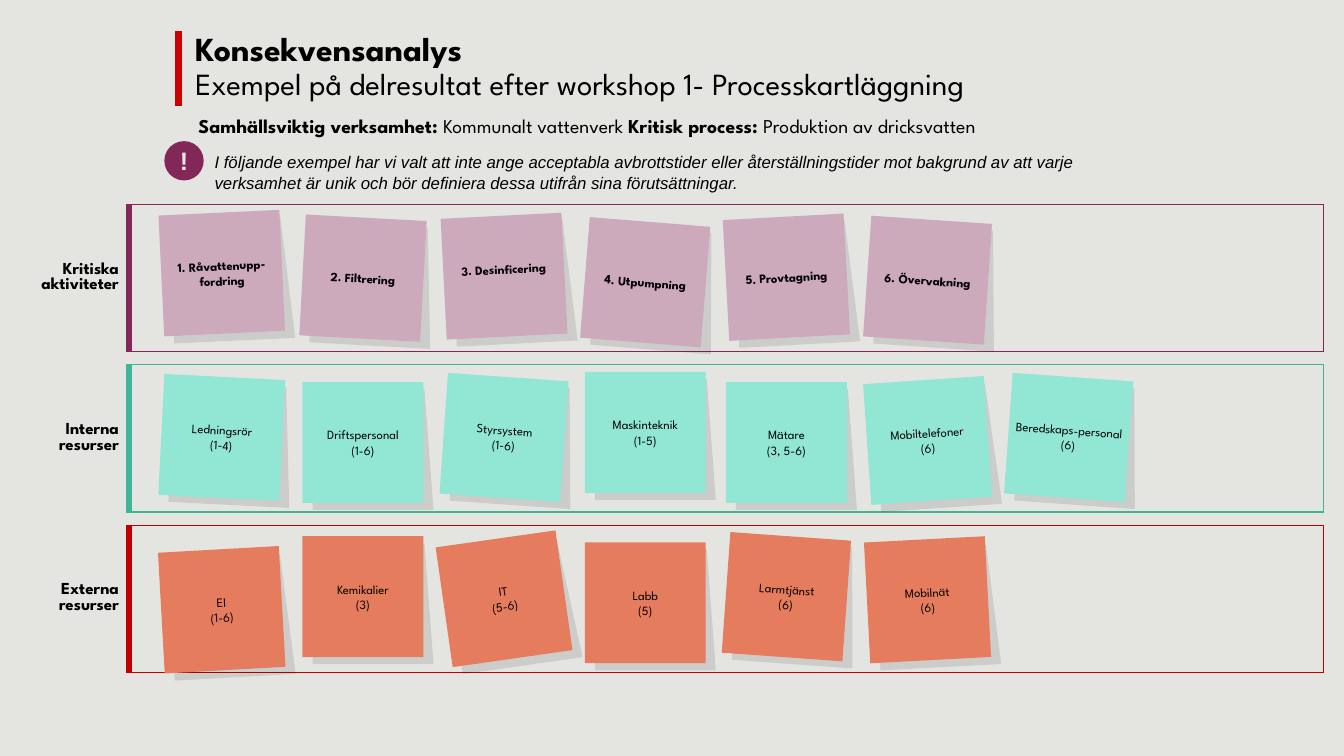
"""Build a slide of sticky notes for a consequence analysis workshop."""
from lxml.etree import SubElement
from pptx import Presentation
from pptx.dml.color import RGBColor
from pptx.enum.shapes import MSO_CONNECTOR, MSO_SHAPE
from pptx.enum.text import MSO_ANCHOR, MSO_AUTO_SIZE, PP_ALIGN
from pptx.oxml.ns import qn
from pptx.util import Inches, Pt

BACKGROUND = RGBColor(0xE4, 0xE4, 0xE1)
BLACK = RGBColor(0, 0, 0)
PLUM = RGBColor(0x82, 0x27, 0x57)
GREEN = RGBColor(0x41, 0xB4, 0x96)
DARK_RED = RGBColor(0xC0, 0, 0)
RED = RGBColor(0xCC, 0, 0)
PINK = RGBColor(0xCD, 0xA9, 0xBC)
MINT = RGBColor(0x92, 0xE6, 0xD4)
CORAL = RGBColor(0xE6, 0x7C, 0x5E)
LIGHT_GREY = RGBColor(0xE7, 0xE6, 0xE6)
HEADING_FONT = "League Spartan"
NO_GRID_STYLE = "{2D5ABB26-0587-4C30-8999-92F81FD0307C}"
LANE_HEIGHT, GAP_HEIGHT = 1.46, 0.13
LABEL_WIDTH, LANE_WIDTH = 1.11, 11.85
NOTE_SIZE, NOTE_PITCH = 1.2, 1.4

# Each lane: label, line colour, note colour, bold, notes as (text, top, rotation).
LANES = [
    ("Kritiska\naktiviteter", PLUM, PINK, True, [
        ("1. Råvattenupp-fordring", 2.11, 357.3),
        ("2. Filtrering", 2.16, 3.1),
        ("3. Desinficering", 2.14, 357.1),
        ("4. Utpumpning", 2.2, 4.6),
        ("5. Provtagning", 2.15, 356.9),
        ("6. Övervakning", 2.18, 3.9)]),
    ("Interna\nresurser", GREEN, MINT, False, [
        ("Ledningsrör\v(1-4)", 3.74, 2.9),
        ("Driftspersonal\v(1-6)", 3.79, 0),
        ("Styrsystem\v(1-6)", 3.74, 4),
        ("Maskinteknik\v(1-5)", 3.69, 0),
        ("Mätare\v(3, 5-6)", 3.79, 0),
        ("Mobiltelefoner\v(6)", 3.77, 356.1),
        ("Beredskaps-personal\v(6)", 3.74, 4.1)]),
    ("Externa resurser", DARK_RED, CORAL, False, [
        ("El\v(1-6)", 5.45, 356.8),
        ("Kemikalier\v(3)", 5.32, 0),
        ("IT\v(5-6)", 5.34, 351.9),
        ("Labb\v(5)", 5.38, 0),
        ("Larmtjänst\v(6)", 5.32, 4.1),
        ("Mobilnät\v(6)", 5.35, 357)]),
]
RAISED_NOTES = {"3. Desinficering": 0.14}


def set_font(font, size, color=BLACK, name=HEADING_FONT, bold=False, italic=False):
    """Set every property of a font."""
    font.size, font.name, font.bold, font.italic = Pt(size), name, bold, italic
    font.color.rgb = color


def set_borders(cell, **borders):
    """Draw the given sides (L, R, T, B) of a cell as (colour, width) and hide the rest."""
    properties = cell._tc.get_or_add_tcPr()
    for side in "LRTB":
        color, width = borders.get(side, (None, 0))
        line = SubElement(properties, qn(f"a:ln{side}"), w=str(Pt(width)))
        if color is None:
            SubElement(line, qn("a:noFill"))
        else:
            fill = SubElement(line, qn("a:solidFill"))
            SubElement(fill, qn("a:srgbClr"), val=str(color))
    cell.fill.background()


def add_lanes(page, left, top):
    """Add the table of labelled lanes separated by narrow gaps."""
    rows = 2 * len(LANES) - 1
    height = len(LANES) * LANE_HEIGHT + (len(LANES) - 1) * GAP_HEIGHT
    table = page.shapes.add_table(rows, 2, Inches(left), Inches(top),
                                  Inches(LABEL_WIDTH + LANE_WIDTH), Inches(height)).table
    table.first_row = table.horz_banding = False
    table._tbl.tblPr.find(qn("a:tableStyleId")).text = NO_GRID_STYLE
    table.columns[0].width = Inches(LABEL_WIDTH)
    table.columns[1].width = Inches(LANE_WIDTH)
    for index in range(rows):
        label, lane = table.cell(index, 0), table.cell(index, 1)
        text, color = LANES[index // 2][:2]
        if index % 2:
            table.rows[index].height = Inches(GAP_HEIGHT)
            set_borders(label)
            set_borders(lane, T=(color, 1), B=(LANES[index // 2 + 1][1], 1))
            for cell in (label, lane):
                cell.margin_top = cell.margin_bottom = 0
                cell.text_frame.paragraphs[0].font.size = Pt(1)
            continue
        table.rows[index].height = Inches(LANE_HEIGHT)
        thin, thick = (color, 1), (color, 4.5)
        set_borders(label, R=thick)
        set_borders(lane, L=thick, T=thin, R=thin, B=thin)
        label.vertical_anchor = MSO_ANCHOR.MIDDLE
        label.text_frame.text = text
        for para in label.text_frame.paragraphs:
            para.alignment = PP_ALIGN.RIGHT
            set_font(para.font, 12, bold=True)


def style_shape(shape, color):
    """Give a shape a flat fill without line or shadow."""
    shape.shadow.inherit = False
    shape.fill.solid()
    shape.fill.fore_color.rgb = color
    shape.line.fill.background()


def fill_centred(shape, text):
    """Centre text in a shape without insets and return its paragraph."""
    frame = shape.text_frame
    frame.word_wrap = True
    frame.vertical_anchor = MSO_ANCHOR.MIDDLE
    frame.margin_left = frame.margin_right = frame.margin_top = frame.margin_bottom = 0
    para = frame.paragraphs[0]
    para.text = text
    para.alignment = PP_ALIGN.CENTER
    return para


def add_note(page, left, top, text, rotation, color, bold):
    """Add a tilted sticky note over its slanted shadow."""
    group = page.shapes.add_group_shape()
    builder = group.shapes.build_freeform(0, 0, scale=Inches(1) / 100)
    side = NOTE_SIZE * 100
    builder.add_line_segments([(side - 9, 0), (side, side), (0, side)], close=True)
    shadow = builder.convert_to_shape(Inches(left + 0.1), Inches(top + 0.07))
    style_shape(shadow, BLACK)
    SubElement(shadow._element.spPr.find(qn("a:solidFill"))[0], qn("a:alpha"), val="10000")
    note = group.shapes.add_shape(MSO_SHAPE.RECTANGLE, Inches(left), Inches(top),
                                  Inches(NOTE_SIZE), Inches(NOTE_SIZE))
    style_shape(note, color)
    shadow.rotation = note.rotation = rotation
    set_font(fill_centred(note, text).font, 9, bold=bold)
    note.text_frame.margin_bottom = Inches(RAISED_NOTES.get(text, 0))


def add_notes(page, left):
    """Add the sticky notes of every lane at an even pitch."""
    for _, _, color, bold, notes in LANES:
        for index, (text, top, rotation) in enumerate(notes):
            add_note(page, left + index * NOTE_PITCH, top, text, rotation, color, bold)


def add_text_frame(page, left, top, width, height):
    """Add a wrapping text box and return its frame."""
    box = page.shapes.add_textbox(Inches(left), Inches(top), Inches(width), Inches(height))
    box.text_frame.word_wrap = True
    return box.text_frame


def add_title(page, left, top):
    """Add the two-line title and the red bar beside it."""
    frame = add_text_frame(page, left, top, 11.2, 0.47)
    frame.text = ("Konsekvensanalys\n"
                  "Exempel på delresultat efter workshop 1- Processkartläggning")
    for para, size, bold in zip(frame.paragraphs, (24, 22), (True, False)):
        para.line_spacing = 0.9
        set_font(para.font, size, bold=bold)
    bar_left = Inches(left - 0.07)
    bar = page.shapes.add_connector(MSO_CONNECTOR.STRAIGHT, bar_left, Inches(top + 0.04),
                                    bar_left, Inches(top + 0.78))
    bar.line.color.rgb = RED
    bar.line.width = Pt(5)
    SubElement(bar._element.spPr, qn("a:effectLst"))


def add_introduction(page, left, top):
    """Add the subject line, the remark and its exclamation badge."""
    subject = add_text_frame(page, left, top, 11.26, 0.34)
    spans = ["Samhällsviktig verksamhet: ", "Kommunalt vattenverk ",
             "Kritisk process: ", "Produktion av dricksvatten"]
    for index, text in enumerate(spans):
        span = subject.paragraphs[0].add_run()
        span.text = text
        set_font(span.font, 14, bold=index % 2 == 0)
    remark = add_text_frame(page, left + 0.16, top + 0.38, 9.1, 0.5)
    remark.text = ("I följande exempel har vi valt att inte ange acceptabla avbrottstider eller "
                   "återställningstider mot bakgrund av att varje verksamhet är unik och bör "
                   "definiera dessa utifrån sina förutsättningar.")
    set_font(remark.paragraphs[0].font, 12, name="Arial", italic=True)
    for frame in (subject, remark):
        frame.auto_size = MSO_AUTO_SIZE.SHAPE_TO_FIT_TEXT
        frame.paragraphs[0].space_after = Pt(12)
    badge = page.shapes.add_shape(MSO_SHAPE.OVAL, Inches(left - 0.24), Inches(top + 0.32),
                                  Inches(0.39), Inches(0.39))
    style_shape(badge, PLUM)
    set_font(fill_centred(badge, "!").font, 18, LIGHT_GREY, "Arial", bold=True)


def main():
    """Build and save the deck."""
    deck = Presentation()
    deck.slide_width, deck.slide_height = Inches(13.33), Inches(7.5)
    page = deck.slides.add_slide(deck.slide_layouts[6])
    page.background.fill.solid()
    page.background.fill.fore_color.rgb = BACKGROUND
    add_lanes(page, 0.17, 2.03)
    add_notes(page, 1.6)
    add_title(page, 1.84, 0.27)
    add_introduction(page, 1.87, 1.08)
    deck.save("out.pptx")


if __name__ == "__main__":
    main()
